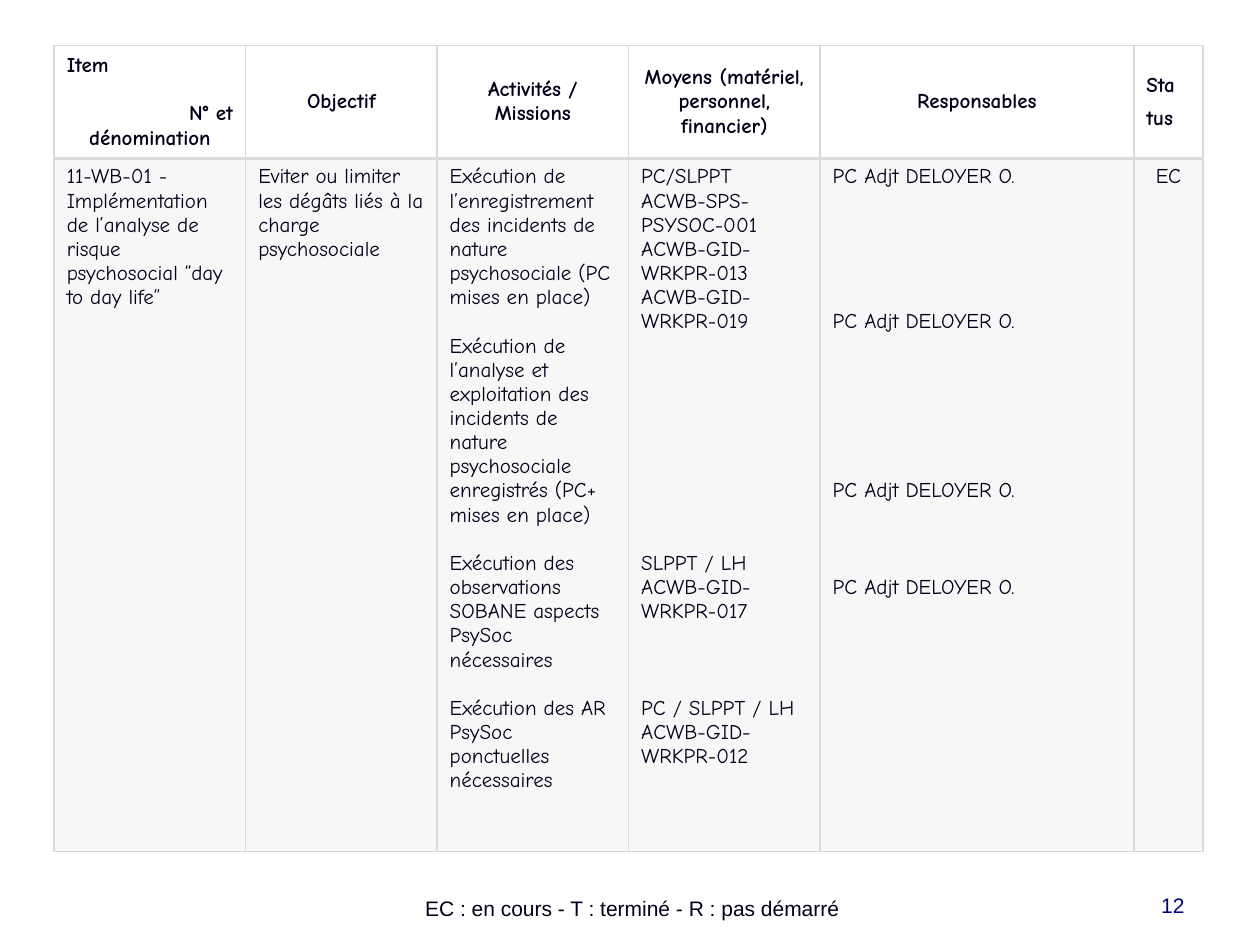
from dataclasses import dataclass

from lxml import etree
from pptx import Presentation
from pptx.dml.color import RGBColor
from pptx.enum.text import MSO_ANCHOR as ANCHOR, PP_ALIGN as ALIGN
from pptx.oxml.ns import qn
from pptx.util import Inches, Pt


@dataclass(frozen=True)
class Theme:
    table_font: str = "Comic Neue"
    plain_font: str = "Arial"
    text: str = "000018"
    number: str = "000080"
    grid: str = "DADADA"
    body_alpha: int = 20
    size: int = 12
    line_pitch: float = 13.8


@dataclass(frozen=True)
class Para:
    text: str
    lines_before: float = 0
    align: ALIGN = ALIGN.LEFT


class SlideBuilder:
    def __init__(self, prs, theme):
        self.theme = theme
        self.slide = prs.slides.add_slide(prs.slide_layouts[6])

    def style(self, p, align, font, color, bold=False):
        p.alignment = align
        p.font.name = font
        p.font.size = Pt(self.theme.size)
        p.font.bold = bold
        p.font.color.rgb = RGBColor.from_string(color)

    def text(self, box, text, align, color, anchor=ANCHOR.TOP):
        sp = self.slide.shapes.add_textbox(*map(Inches, box))
        tf = sp.text_frame
        tf.word_wrap = True
        tf.vertical_anchor = anchor
        p = tf.paragraphs[0]
        p.text = text
        self.style(p, align, self.theme.plain_font, color)

    def borders(self, cell, bottom):
        tc_pr = cell._tc.get_or_add_tcPr()
        sides = {"a:lnL": 1, "a:lnR": 1, "a:lnT": 1, "a:lnB": bottom}
        for i, (tag, width) in enumerate(sides.items()):
            ln = etree.Element(qn(tag), w=str(Pt(width)))
            fill = etree.SubElement(ln, qn("a:solidFill"))
            etree.SubElement(fill, qn("a:srgbClr"), val=self.theme.grid)
            tc_pr.insert(i, ln)

    def cell(self, cell, paras, header):
        th = self.theme
        cell.vertical_anchor = ANCHOR.MIDDLE if header else ANCHOR.TOP
        if header:
            cell.fill.background()
        else:
            cell.fill.solid()
            cell.fill.fore_color.rgb = RGBColor.from_string(th.grid)
            color = cell._tc.tcPr.find(".//" + qn("a:srgbClr"))
            etree.SubElement(color, qn("a:alpha"), val=str(th.body_alpha * 1000))
        self.borders(cell, 2 if header else 1)
        tf = cell.text_frame
        for i, para in enumerate(paras):
            p = tf.add_paragraph() if i else tf.paragraphs[0]
            p.text = para.text
            if para.lines_before:
                p.space_before = Pt(para.lines_before * th.line_pitch)
            self.style(p, para.align, th.table_font, th.text, header)

    def table(self, left, top, widths, heights, rows):
        frame = self.slide.shapes.add_table(
            len(rows), len(widths), Inches(left), Inches(top),
            Inches(sum(widths)), Inches(sum(heights)))
        table = frame.table
        table.first_row = table.horz_banding = False
        for column, width in zip(table.columns, widths):
            column.width = Inches(width)
        for r, (height, row) in enumerate(zip(heights, rows)):
            table.rows[r].height = Inches(height)
            for c, paras in enumerate(row):
                self.cell(table.cell(r, c), paras, r == 0)


HEADER = [
    [Para("Item"), Para("N° et", 1, ALIGN.RIGHT), Para("dénomination", 0, ALIGN.CENTER)],
    *[[Para(title, 0, ALIGN.CENTER)] for title in (
        "Objectif", "Activités / Missions",
        "Moyens (matériel, personnel, financier)", "Responsables")],
    [Para("Sta"), Para("tus", 0.36)],
]

BODY = [
    [Para("11-WB-01 - Implémentation de l’analyse de risque psychosocial “day to day life”")],
    [Para("Eviter ou limiter les dégâts liés à la charge psychosociale")],
    [
        Para("Exécution de l’enregistrement des incidents de nature "
             "psychosociale (PC mises en place)"),
        Para("Exécution de l’analyse et exploitation des incidents de nature "
             "psychosociale enregistrés (PC+ mises en place)", 1),
        Para("Exécution des observations SOBANE aspects PsySoc nécessaires", 1),
        Para("Exécution des AR PsySoc ponctuelles nécessaires", 1),
    ],
    [
        Para("PC/SLPPT"),
        Para("ACWB-SPS-PSYSOC-001"),
        Para("ACWB-GID-WRKPR-013"),
        Para("ACWB-GID-WRKPR-019"),
        Para("SLPPT / LH", 9),
        Para("ACWB-GID-WRKPR-017"),
        Para("PC / SLPPT / LH", 3),
        Para("ACWB-GID-WRKPR-012"),
    ],
    [Para("PC Adjt DELOYER O.", gap) for gap in (0, 5, 6, 3)],
    [Para("EC", 0, ALIGN.CENTER)],
]


def main():
    prs = Presentation()
    prs.slide_width, prs.slide_height = Inches(10), Inches(7.5)
    theme = Theme()
    s = SlideBuilder(prs, theme)
    s.text((7.17, 6.83, 2.33, 0.5), "12", ALIGN.RIGHT, theme.number, ANCHOR.BOTTOM)
    s.table(0.43, 0.36, [1.52] * 4 + [2.49, 0.55], [0.9, 5.5], [HEADER, BODY])
    s.text((2.52, 7.06, 5, 0.3), "EC : en cours - T : terminé - R : pas démarré",
           ALIGN.CENTER, theme.text)
    prs.save("out.pptx")


if __name__ == "__main__":
    main()
